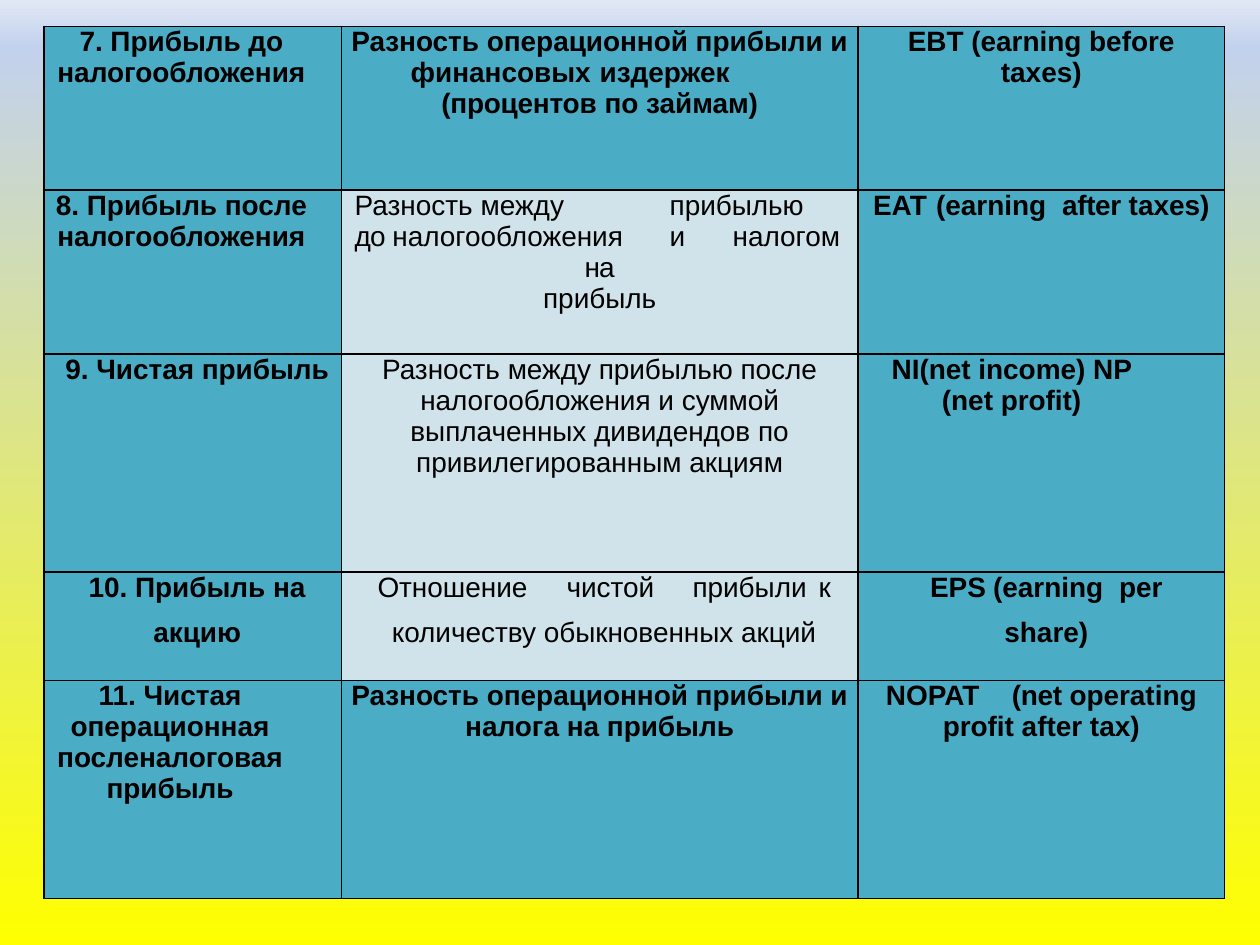
import pptx
import pptx.util
import pptx.dml.color
import pptx.enum.text
import pptx.oxml
import pptx.oxml.ns
import lxml.etree

Inches, Pt = pptx.util.Inches, pptx.util.Pt
qn = pptx.oxml.ns.qn

THEME = {
    "font": "Arial", "size": 16, "text": "000000", "border": "000000",
    "strong": "4BACC6", "light": "D0E3EA",
    "background": [(0, "FFFF00"), (95, "C2D1ED"), (100, "E1E8F5")],
}

LEFT, TOP = 0.35, 0.21
COLUMN_WIDTHS = [2.36, 4.1, 2.91]
ROW_HEIGHTS = [1.3, 1.3, 1.73, 0.86, 1.73]
LEFT_MARGINS = [0.07, 0.07, 0.08]
LINE_GAP = 8  # points before the second line of the airy row


def entry(*paragraphs, right=0.0, tabs=(), gap=0, light=False):
    """Cell content: each paragraph is a string or a list of (text, letter spacing)."""
    return {"paragraphs": [[(p, 0)] if isinstance(p, str) else p for p in paragraphs],
            "right": right, "tabs": tabs, "gap": gap, "light": light}


# Indicator, how it is calculated, English term
INDICATORS = [
    [entry("7. Прибыль до налогообложения", right=0.25),
     entry([("Разность операционной прибыли и финансовых\tиздержек\t", 0),
            ("(процентов ", -0.1), ("по займам)", 0)], right=0.07, tabs=(1.24, 2.17)),
     entry("EBT (earning before taxes)", right=0.08)],
    [entry("8. Прибыль после налогообложения", right=0.25),
     entry([("Разность\tмежду\t\tприбылью\t", 0), ("до ", -0.5),
            ("налогообложения\tи\tналогом\t", 0), ("на", -0.5)], "прибыль",
           right=0.07, tabs=(1.04, 1.74, 1.8, 2.03, 2.9), light=True),
     entry([("EAT\t(earning\t", 0), ("after ", -0.2), ("taxes)", 0)],
           right=0.08, tabs=(0.56, 1.37))],
    [entry("9. Чистая прибыль"),
     entry("Разность между прибылью после налогообложения и суммой выплаченных дивидендов по",
           "привилегированным акциям", right=0.07, light=True),
     entry("NI(net income) NP (net profit)", right=0.55)],
    [entry("10. Прибыль на", "акцию", gap=LINE_GAP),
     entry("Отношение\tчистой\tприбыли\tк", "количеству обыкновенных акций",
           tabs=(1.25, 2.05, 3), gap=LINE_GAP, light=True),
     entry("EPS\t(earning\tper", "share)", tabs=(0.61, 1.48), gap=LINE_GAP)],
    [entry("11. Чистая операционная посленалоговая", "прибыль", right=0.43),
     entry("Разность операционной прибыли и налога на прибыль", right=0.07),
     entry([("NOPAT\t", 0), ("(net ", -0.2), ("operating profit after tax)", 0)],
           right=0.08, tabs=(1.44,))],
]


def color(name):
    return pptx.dml.color.RGBColor.from_string(THEME[name])


def paint_background(slide):
    stops = "".join(f'<a:gs pos="{pos * 1000}"><a:srgbClr val="{rgb}"/></a:gs>'
                    for pos, rgb in THEME["background"])
    gradient = pptx.oxml.parse_xml(
        f'<a:gradFill {pptx.oxml.ns.nsdecls("a")} rotWithShape="1"><a:gsLst>{stops}</a:gsLst>'
        '<a:lin ang="16200000" scaled="0"/></a:gradFill>')
    fill = slide.background.fill
    fill.solid()
    solid = slide.element.find(".//" + qn("p:bgPr")).find(qn("a:solidFill"))
    solid.getparent().replace(solid, gradient)


def draw_borders(cell):
    properties = cell._tc.get_or_add_tcPr()
    for side in ("lnL", "lnR", "lnT", "lnB"):
        line = lxml.etree.SubElement(properties, qn("a:" + side), w=str(Pt(1)))
        fill = lxml.etree.SubElement(line, qn("a:solidFill"))
        lxml.etree.SubElement(fill, qn("a:srgbClr"), val=THEME["border"])


def set_indents(paragraph, left, right, tabs):
    properties = paragraph._p.get_or_add_pPr()
    properties.set("marL", str(Inches(left)))
    properties.set("marR", str(Inches(right)))
    properties.set("indent", "0")
    if tabs:
        stops = lxml.etree.SubElement(properties, qn("a:tabLst"))
        for position in tabs:
            lxml.etree.SubElement(stops, qn("a:tab"), pos=str(Inches(position)), algn="l")


def add_run(paragraph, text, spacing, bold):
    run = paragraph.add_run()
    run.text = text
    run.font.name = THEME["font"]
    run.font.size = Pt(THEME["size"])
    run.font.bold = bold
    run.font.color.rgb = color("text")
    if spacing:
        run._r.get_or_add_rPr().set("spc", str(round(spacing * 100)))


def fill_cell(cell, content, left):
    cell.margin_left = cell.margin_right = cell.margin_top = cell.margin_bottom = 0
    draw_borders(cell)
    cell.fill.solid()
    cell.fill.fore_color.rgb = color("light" if content["light"] else "strong")
    frame = cell.text_frame
    for index, runs in enumerate(content["paragraphs"]):
        paragraph = frame.add_paragraph() if index else frame.paragraphs[0]
        paragraph.alignment = pptx.enum.text.PP_ALIGN.CENTER
        if index and content["gap"]:
            paragraph.space_before = Pt(content["gap"])
        set_indents(paragraph, left, content["right"], () if index else content["tabs"])
        for text, spacing in runs:
            add_run(paragraph, text, spacing, not content["light"])


def main():
    deck = pptx.Presentation()
    deck.slide_width, deck.slide_height = Inches(10), Inches(7.5)
    slide = deck.slides.add_slide(deck.slide_layouts[6])
    paint_background(slide)

    # Table of profit indicators
    indicators = slide.shapes.add_table(
        len(ROW_HEIGHTS), len(COLUMN_WIDTHS), Inches(LEFT), Inches(TOP),
        Inches(sum(COLUMN_WIDTHS)), Inches(sum(ROW_HEIGHTS))).table
    indicators.first_row = indicators.horz_banding = False
    for column, width in zip(indicators.columns, COLUMN_WIDTHS):
        column.width = Inches(width)
    for row, height, contents in zip(indicators.rows, ROW_HEIGHTS, INDICATORS):
        row.height = Inches(height)
        for cell, content, left in zip(row.cells, contents, LEFT_MARGINS):
            fill_cell(cell, content, left)

    deck.save("out.pptx")


if __name__ == "__main__":
    main()
